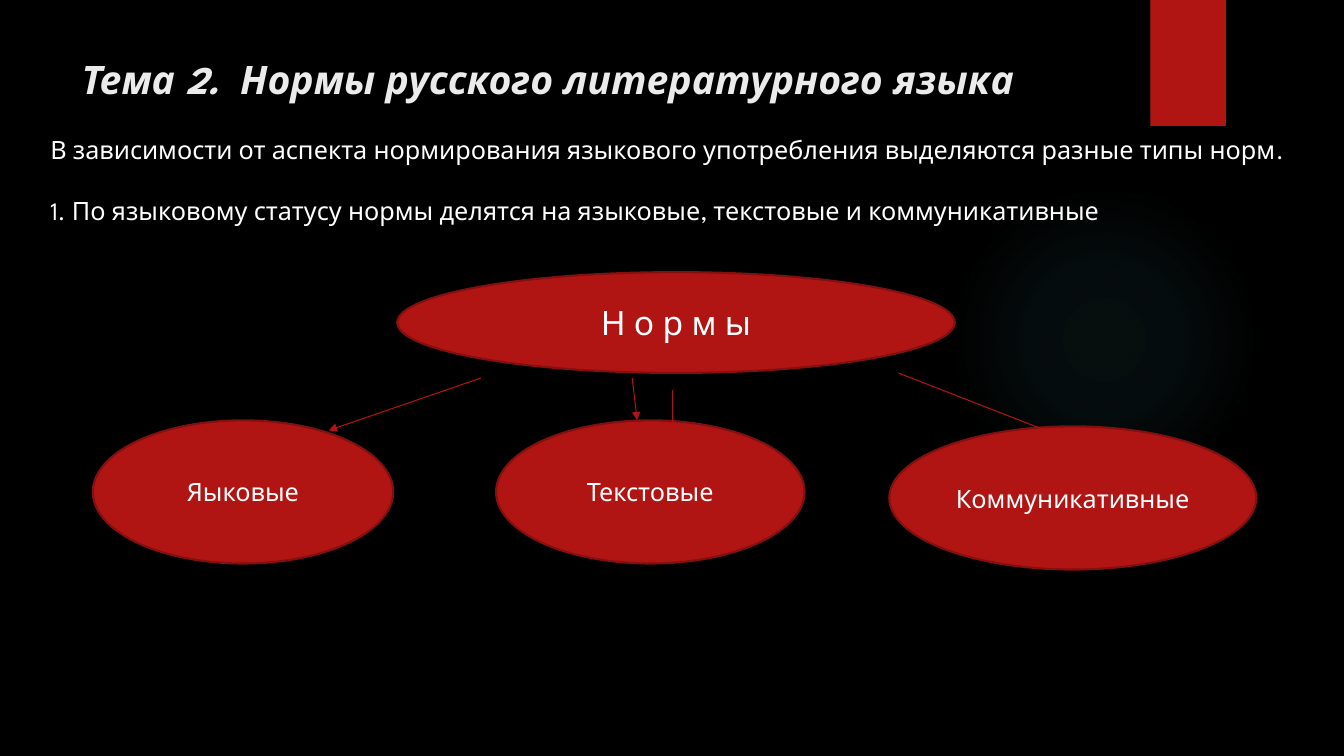
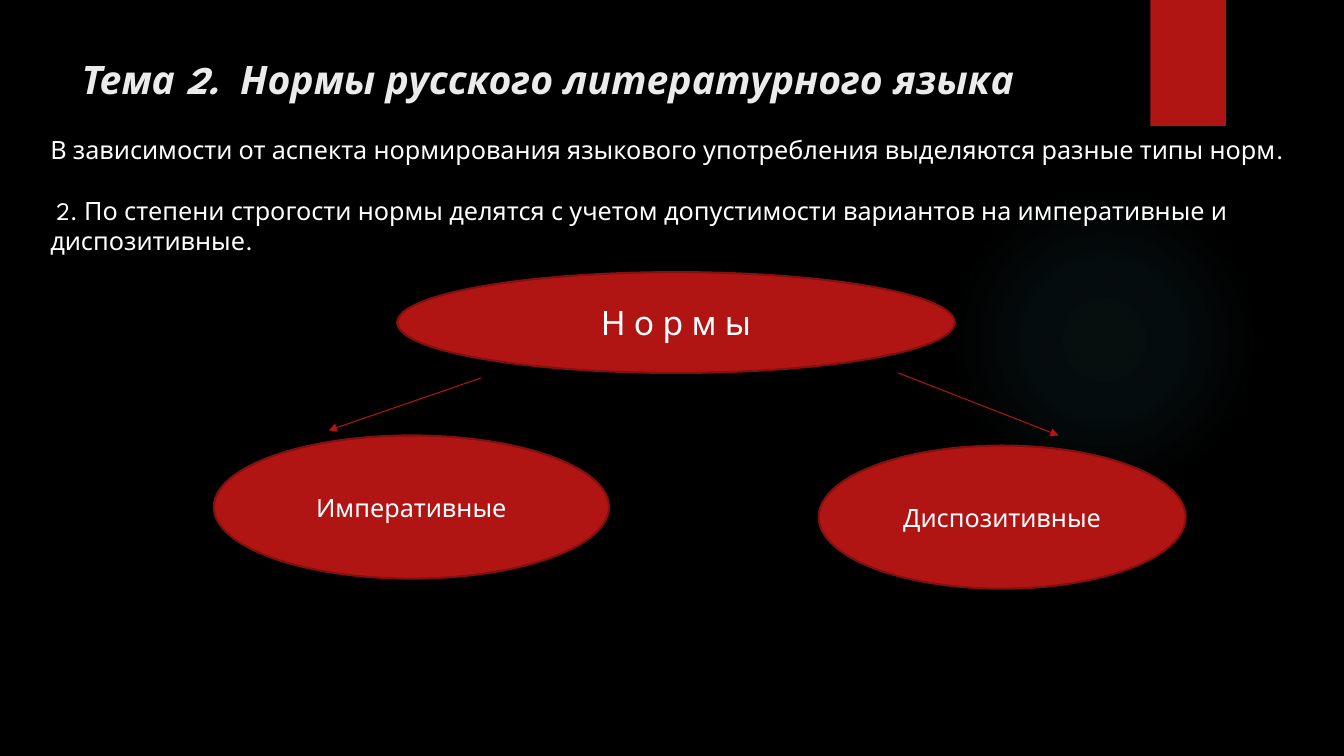
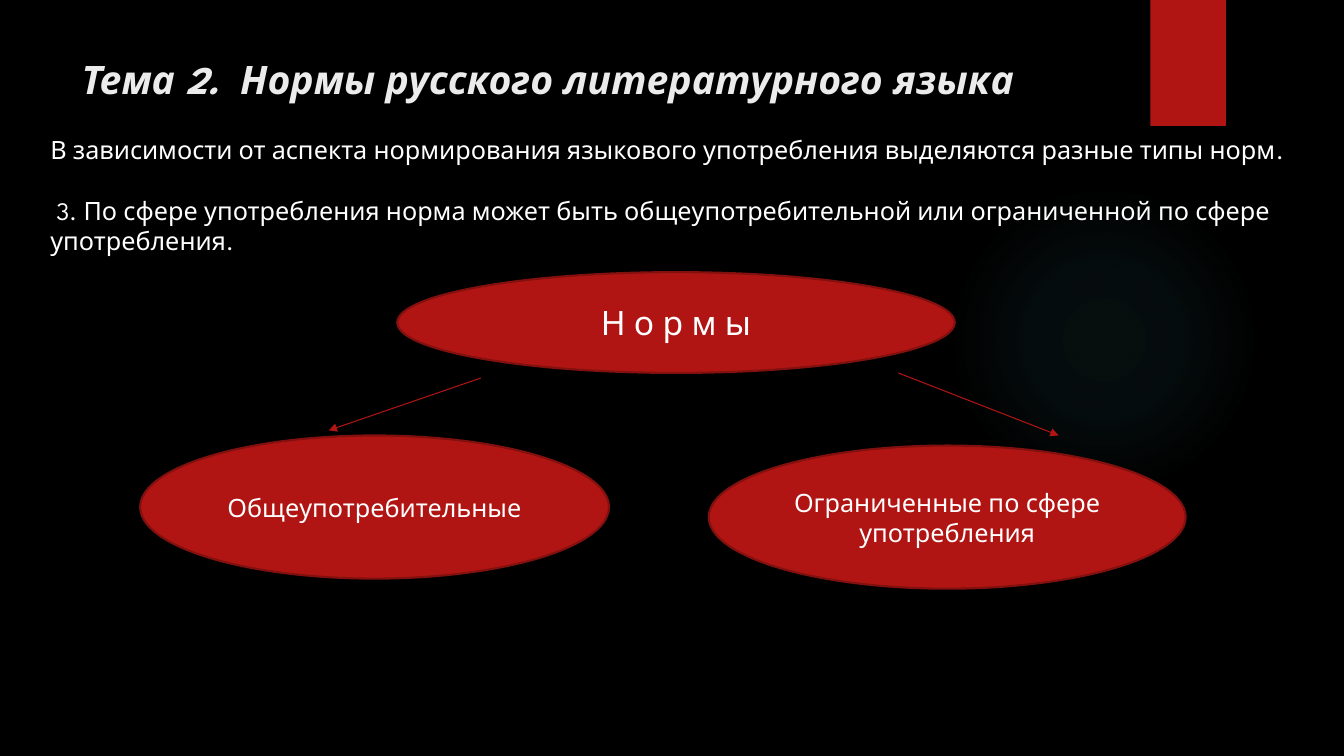
from lxml import etree
from pptx import Presentation
from pptx.dml.color import RGBColor
from pptx.enum.shapes import MSO_CONNECTOR, MSO_SHAPE
from pptx.enum.text import MSO_ANCHOR, MSO_AUTO_SIZE, PP_ALIGN
from pptx.oxml.ns import qn
from pptx.util import Inches, Pt

COLORS = {
    "background": "000000",
    "red": "B01513",
    "outline": "82100E",
    "title": "EBEBEB",
    "text": "FFFFFF",
    "glow": "50B9C1",
}
FONT = "League Spartan"
TITLE = "Тема 2.  Нормы русского литературного языка"
INTRO = ("В зависимости от аспекта нормирования языкового употребления "
         "выделяются разные типы норм.")

# Boxes are left, top, width, height in inches
GLOW_BOX = (9.41, 1.83, 3.08, 3.08)
TAB_BOX = (11.41, 0, 0.75, 1.25)
TITLE_BOX = (0.71, 0.5, 10.29, 0.78)
INTRO_BOX = (0.4, 1.28, 12.51, 1.62)
ROOT_BOX = (3.94, 2.7, 5.53, 1)
BRANCH_HEIGHT = 1.42

# Arrows start and end at offsets from the corner of the root box
SIDE_ARROWS = [((0.83, 1.05), (-0.68, 1.57)), ((4.97, 1), (6.56, 1.62))]
MIDDLE_ARROWS = [((2.73, 1.17), (2.73, 1.77)), ((2.33, 1.05), (2.38, 1.47))]

# Branches: text, left and top offset from the root box, width
SLIDES = [
    {
        "point": "1. По языковому статусу нормы делятся на языковые, "
                 "текстовые и коммуникативные",
        "branches": [("Яыковые", -3.02, 1.47, 2.98),
                     ("Текстовые", 0.98, 1.47, 3.06),
                     ("Коммуникативные", 4.88, 1.53, 3.64)],
        "arrows": SIDE_ARROWS + MIDDLE_ARROWS,
    },
    {
        "point": " 2. По степени строгости нормы делятся с учетом допустимости "
                 "вариантов на императивные и диспозитивные.",
        "branches": [("Императивные", -1.82, 1.62, 3.92),
                     ("Диспозитивные", 4.18, 1.72, 3.64)],
        "arrows": SIDE_ARROWS,
    },
    {
        "point": " 3. По сфере употребления норма может быть общеупотребительной "
                 "или ограниченной по сфере употребления.",
        "branches": [("Общеупотребительные", -2.55, 1.62, 4.65),
                     ("Ограниченные по сфере употребления", 3.09, 1.72, 4.73)],
        "arrows": SIDE_ARROWS,
    },
]


def color(name):
    return RGBColor.from_string(COLORS[name])


def inches(values):
    return [Inches(value) for value in values]


def add_span(para, text, size, tint="text", bold=False, italic=False):
    span = para.add_run()
    span.text = text
    span.font.name = FONT
    span.font.size = Pt(size)
    span.font.bold = bold
    span.font.italic = italic
    span.font.color.rgb = color(tint)


def add_filled(page, kind, box):
    shape = page.shapes.add_shape(kind, *inches(box))
    shape.shadow.inherit = False
    shape.fill.solid()
    shape.fill.fore_color.rgb = color("red")
    shape.line.fill.background()
    return shape


def fill_with_glow(shape):
    """Swap the solid fill for a radial one that fades out."""
    gradient = etree.Element(qn("a:gradFill"), rotWithShape="1")
    stops = etree.SubElement(gradient, qn("a:gsLst"))
    for position, alpha in ((0, 7), (36, 6), (69, 0)):
        stop = etree.SubElement(stops, qn("a:gs"), pos=str(position * 1000))
        tint = etree.SubElement(stop, qn("a:srgbClr"), val=COLORS["glow"])
        etree.SubElement(tint, qn("a:alpha"), val=str(alpha * 1000))
    radial = etree.SubElement(gradient, qn("a:path"), path="circle")
    etree.SubElement(radial, qn("a:fillToRect"), l="50000", t="50000", r="50000", b="50000")
    solid = shape.element.spPr.find(qn("a:solidFill"))
    solid.getparent().replace(solid, gradient)


def dress_layout(layout, page):
    """Put background, glow and tab on the layout, drawing them on a page first."""
    layout.background.fill.solid()
    layout.background.fill.fore_color.rgb = color("background")
    glow = add_filled(page, MSO_SHAPE.OVAL, GLOW_BOX)
    fill_with_glow(glow)
    tab = add_filled(page, MSO_SHAPE.RECTANGLE, TAB_BOX)
    for shape in (glow, tab):
        layout.shapes.element.append(shape.element)


def add_title(page, box):
    title = page.shapes.title
    title.left, title.top, title.width, title.height = inches(box)
    frame = title.text_frame
    frame.auto_size = MSO_AUTO_SIZE.NONE
    frame.vertical_anchor = MSO_ANCHOR.TOP
    para = frame.paragraphs[0]
    para.alignment = PP_ALIGN.LEFT
    add_span(para, TITLE, 28, "title", bold=True, italic=True)


def add_intro(page, box, point):
    frame = page.shapes.add_textbox(*inches(box)).text_frame
    frame.word_wrap = True
    add_span(frame.paragraphs[0], INTRO, 18)
    para = frame.add_paragraph()
    para.space_before = Pt(22)
    add_span(para, point, 18)


def add_node(page, box, text, size):
    node = add_filled(page, MSO_SHAPE.OVAL, box)
    node.line.color.rgb = color("outline")
    node.line.width = Pt(1.5)
    frame = node.text_frame
    frame.word_wrap = True
    frame.vertical_anchor = MSO_ANCHOR.MIDDLE
    para = frame.paragraphs[0]
    para.alignment = PP_ALIGN.CENTER
    add_span(para, text, size)


def add_arrow(page, start, end):
    arrow = page.shapes.add_connector(MSO_CONNECTOR.STRAIGHT, *inches(start + end))
    arrow.line.color.rgb = color("red")
    arrow.line.width = Pt(0.75)
    etree.SubElement(arrow.line._get_or_add_ln(), qn("a:tailEnd"), type="triangle")
    etree.SubElement(arrow.element.spPr, qn("a:effectLst"))


def add_diagram(page, box, branches, arrows):
    left, top = box[:2]
    add_node(page, box, "Н о р м ы", 24)
    for text, across, down, width in branches:
        add_node(page, (left + across, top + down, width, BRANCH_HEIGHT), text, 18)
    for ends in arrows:
        start, end = [(left + across, top + down) for across, down in ends]
        add_arrow(page, start, end)


def main():
    deck = Presentation()
    deck.slide_width, deck.slide_height = inches((13.33, 7.5))
    layout = deck.slide_layouts[5]
    for number, content in enumerate(SLIDES):
        page = deck.slides.add_slide(layout)
        if number == 0:
            dress_layout(layout, page)
        add_title(page, TITLE_BOX)
        add_intro(page, INTRO_BOX, content["point"])
        add_diagram(page, ROOT_BOX, content["branches"], content["arrows"])
    deck.save("out.pptx")


if __name__ == "__main__":
    main()
